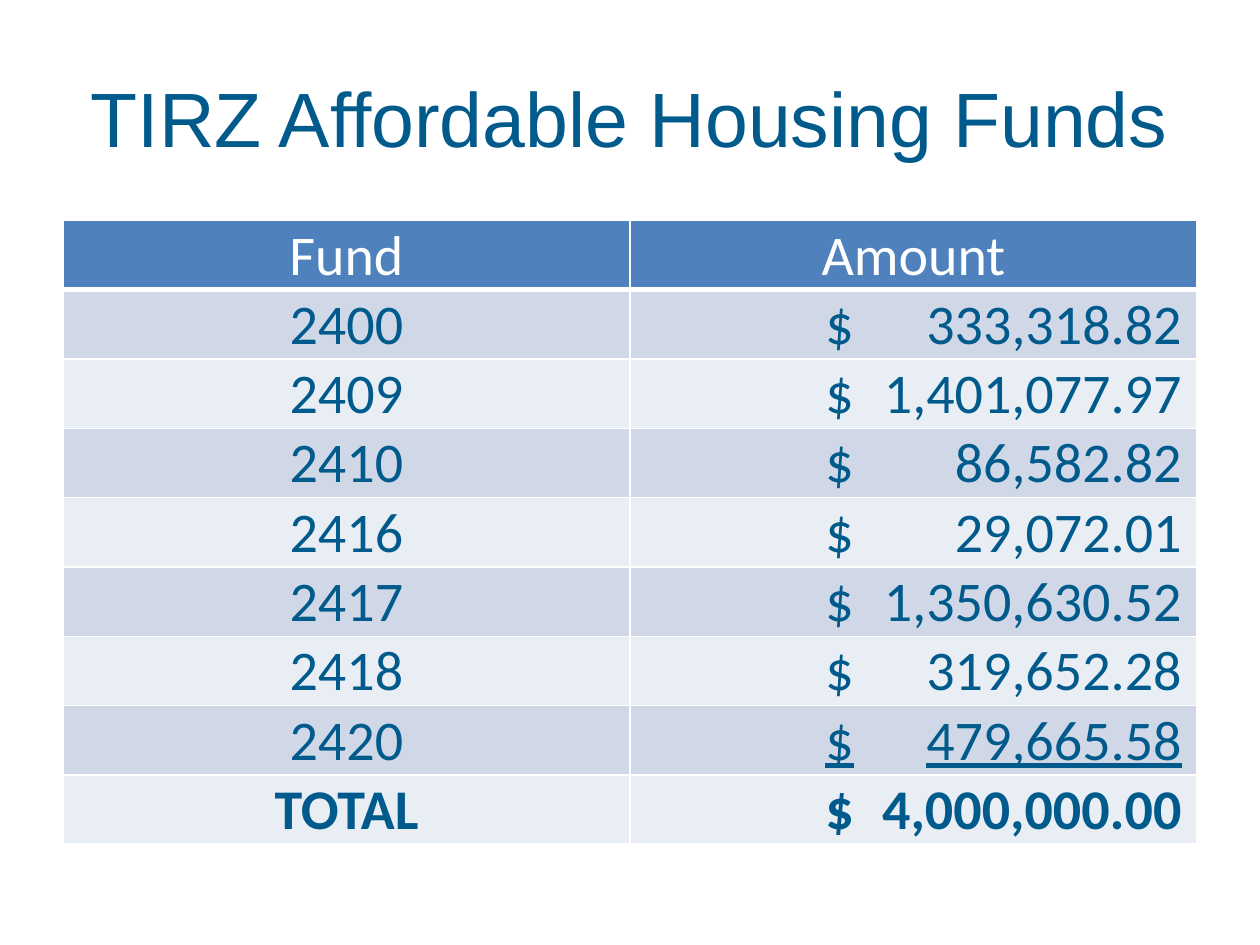
from dataclasses import dataclass

from lxml import etree
from pptx import Presentation
from pptx.dml.color import RGBColor
from pptx.enum.text import MSO_ANCHOR, PP_ALIGN
from pptx.oxml.ns import qn
from pptx.util import Inches, Pt

LEFT, CENTER = PP_ALIGN.LEFT, PP_ALIGN.CENTER
MIDDLE, BOTTOM = MSO_ANCHOR.MIDDLE, MSO_ANCHOR.BOTTOM

NAVY, WHITE = "005A8B", "FFFFFF"
HEADER_FILL = "4F81BD"
BAND_FILLS = ("D0D8E8", "E9EDF4")

ROW_HEIGHT = Inches(0.55)
COLUMN_WIDTH = Inches(4.5)
CELL_MARGIN = Inches(0.01)
DOLLAR_INDENT = Inches(1.55)
AMOUNT_TAB = Inches(2.83)


@dataclass
class FundRow:
    fund: str
    amount: str
    bold: bool = False
    underline: bool = False


FUNDS = [
    FundRow("2400", "333,318.82"),
    FundRow("2409", "1,401,077.97"),
    FundRow("2410", "86,582.82"),
    FundRow("2416", "29,072.01"),
    FundRow("2417", "1,350,630.52"),
    FundRow("2418", "319,652.28"),
    FundRow("2420", "479,665.58", underline=True),
    FundRow("TOTAL", "4,000,000.00", bold=True),
]


def rgb(value: str) -> RGBColor:
    return RGBColor.from_string(value)


def write(paragraph, text: str, font: str, size: int, color: str,
          bold: bool = False, underline: bool = False) -> None:
    paragraph.text = text
    for run in paragraph.runs:
        run.font.name = font
        run.font.size = Pt(size)
        run.font.color.rgb = rgb(color)
        run.font.bold = bold
        run.font.underline = underline


def set_borders(cell, bottom_width: int) -> None:
    """Draw white lines on all four sides of a cell."""
    properties = cell._tc.get_or_add_tcPr()
    widths = {"a:lnL": 1, "a:lnR": 1, "a:lnT": 1, "a:lnB": bottom_width}
    for position, (tag, width) in enumerate(widths.items()):
        line = etree.Element(qn(tag), w=str(Pt(width)))
        fill = etree.SubElement(line, qn("a:solidFill"))
        etree.SubElement(fill, qn("a:srgbClr"), val=WHITE)
        properties.insert(position, line)


def fill_cell(cell, text: str, fill: str, color: str, bold: bool = False,
              underline: bool = False, bottom_width: int = 1) -> None:
    cell.fill.solid()
    cell.fill.fore_color.rgb = rgb(fill)
    cell.vertical_anchor = BOTTOM
    cell.margin_left = cell.margin_right = cell.margin_top = CELL_MARGIN
    cell.margin_bottom = 0
    set_borders(cell, bottom_width)
    paragraph = cell.text_frame.paragraphs[0]
    paragraph.alignment = CENTER
    write(paragraph, text, "Calibri", 32, color, bold, underline)


def align_amount(cell) -> None:
    """Line up the dollar sign on the left and the figure on a right tab."""
    cell.margin_left = DOLLAR_INDENT
    paragraph = cell.text_frame.paragraphs[0]
    paragraph.alignment = LEFT
    tabs = etree.SubElement(paragraph._p.get_or_add_pPr(), qn("a:tabLst"))
    etree.SubElement(tabs, qn("a:tab"), pos=str(AMOUNT_TAB), algn="r")


def add_title(slide, text: str) -> None:
    title = slide.shapes.add_textbox(Inches(0.5), Inches(0.3), Inches(9), Inches(1.25))
    frame = title.text_frame
    frame.word_wrap = True
    frame.vertical_anchor = MIDDLE
    paragraph = frame.paragraphs[0]
    paragraph.alignment = CENTER
    write(paragraph, text, "Arial", 44, NAVY)


def add_fund_table(slide, funds: list[FundRow]) -> None:
    row_count = len(funds) + 1
    table = slide.shapes.add_table(row_count, 2, Inches(0.5), Inches(1.75),
                                   COLUMN_WIDTH * 2, ROW_HEIGHT * row_count).table
    for column in table.columns:
        column.width = COLUMN_WIDTH
    for row in table.rows:
        row.height = ROW_HEIGHT

    # Header
    for index, heading in enumerate(("Fund", "Amount")):
        fill_cell(table.cell(0, index), heading, HEADER_FILL, WHITE, bottom_width=3)

    # Funds and total
    for index, entry in enumerate(funds):
        band = BAND_FILLS[index % 2]
        fund_cell, amount_cell = table.cell(index + 1, 0), table.cell(index + 1, 1)
        fill_cell(fund_cell, entry.fund, band, NAVY, entry.bold)
        fill_cell(amount_cell, f"$\t{entry.amount}", band, NAVY, entry.bold, entry.underline)
        align_amount(amount_cell)


def main() -> None:
    deck = Presentation()
    deck.slide_width, deck.slide_height = Inches(10), Inches(7.5)
    slide = deck.slides.add_slide(deck.slide_layouts[6])
    add_title(slide, "TIRZ Affordable Housing Funds")
    add_fund_table(slide, FUNDS)
    deck.save("out.pptx")


if __name__ == "__main__":
    main()
